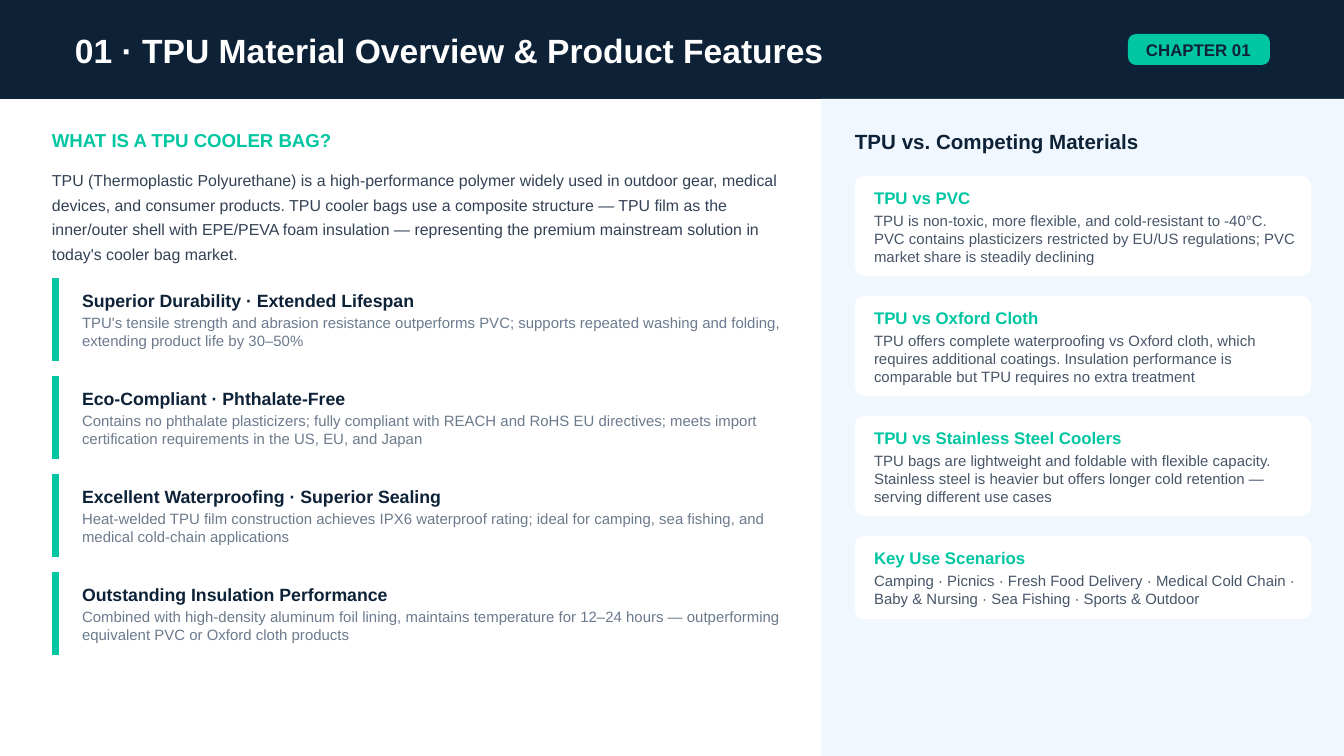
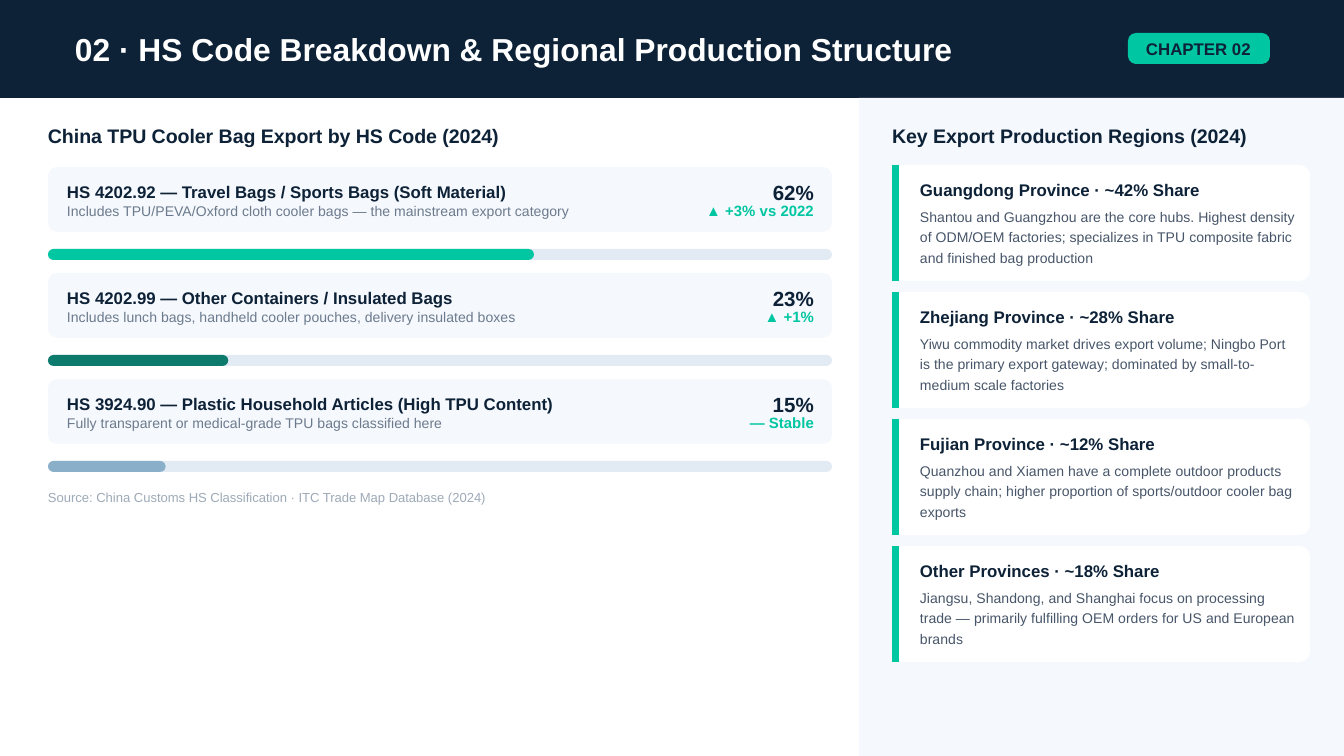
import pptx
import pptx.dml.color
import pptx.enum.shapes
import pptx.enum.text
import pptx.oxml
import pptx.oxml.ns
import pptx.util

PX = 914400 / 134.4  # EMU in one px
NAVY, GREEN, WHITE = "0D2137", "00C6A2", "FFFFFF"
SLATE, GREY, INK, PALE = "475569", "6B7A8D", "334155", "F5F8FC"
color = pptx.dml.color.RGBColor.from_string
SHAPES = pptx.enum.shapes.MSO_SHAPE
LEFT, RIGHT = pptx.enum.text.PP_ALIGN.LEFT, pptx.enum.text.PP_ALIGN.RIGHT


def add_block(page, left, top, width, height, fill, radius=0):
    kind = SHAPES.ROUNDED_RECTANGLE if radius else SHAPES.RECTANGLE
    block = page.shapes.add_shape(kind, *[round(n * PX) for n in (left, top, width, height)])
    if radius:
        block.adjustments[0] = min(0.5, radius / min(width, height))
    block.shadow.inherit = False
    block.fill.solid()
    block.fill.fore_color.rgb = color(fill)
    block.line.fill.background()


def add_text(page, left, top, width, height, text, size, ink, bold=False, align=LEFT, spacing=None):
    box = page.shapes.add_textbox(*[round(n * PX) for n in (left, top, width, height)])
    frame = box.text_frame
    frame.word_wrap = True
    frame.margin_left = frame.margin_top = frame.margin_right = frame.margin_bottom = 0
    para = frame.paragraphs[0]
    para.text = text
    para.alignment = align
    if spacing:
        para.line_spacing = pptx.util.Pt(spacing)
    para.font.name = "Arial"
    para.font.size = pptx.util.Pt(size)
    para.font.bold = bold
    para.font.color.rgb = color(ink)


deck = pptx.Presentation()
deck.slide_width, deck.slide_height = round(1344 * PX), round(756 * PX)

# Header band, chapter badge and right-hand panel of each slide
pages = []
for title, size, chapter, band, panel_left, panel_fill in [
    ("01 · TPU Material Overview & Product Features", 18, "CHAPTER 01", 99, 821, "F0F7FF"),
    ("02 · HS Code Breakdown & Regional Production Structure", 17, "CHAPTER 02", 98, 859, PALE),
]:
    page = deck.slides.add_slide(deck.slide_layouts[6])
    add_block(page, 0, 0, 1344, band, NAVY)
    add_text(page, 75, 30, 900, 39, title, size, WHITE, True)
    add_block(page, 1128, band - 65, 142, 31, GREEN, 8)
    add_text(page, 1146, band - 59, 108, 20, chapter, 9, NAVY, True)
    add_block(page, panel_left, band, 1344 - panel_left, 756 - band, panel_fill)
    pages.append(page)
overview, exports = pages
accents = []  # page, x, top, height of each green edge

# Slide 1, left: introduction and features
add_text(overview, 52, 129, 754, 22, "WHAT IS A TPU COOLER BAG?", 10, GREEN, True)
add_text(
    overview, 52, 165, 754, 98,
    "TPU (Thermoplastic Polyurethane) is a high-performance polymer widely used in outdoor gear, "
    "medical devices, and consumer products. TPU cooler bags use a composite structure — TPU film "
    "as the inner/outer shell with EPE/PEVA foam insulation — representing the premium mainstream "
    "solution in today's cooler bag market.",
    8.5, INK, spacing=13.2)
features = [
    ("Superior Durability · Extended Lifespan",
     "TPU's tensile strength and abrasion resistance outperforms PVC; supports repeated washing "
     "and folding, extending product life by 30–50%"),
    ("Eco-Compliant · Phthalate-Free",
     "Contains no phthalate plasticizers; fully compliant with REACH and RoHS EU directives; "
     "meets import certification requirements in the US, EU, and Japan"),
    ("Excellent Waterproofing · Superior Sealing",
     "Heat-welded TPU film construction achieves IPX6 waterproof rating; ideal for camping, "
     "sea fishing, and medical cold-chain applications"),
    ("Outstanding Insulation Performance",
     "Combined with high-density aluminum foil lining, maintains temperature for 12–24 hours — "
     "outperforming equivalent PVC or Oxford cloth products"),
]
for row, (name, detail) in enumerate(features):
    top = 278 + 98 * row
    add_block(overview, 52, top, 739, 83, WHITE, 11)
    accents.append((overview, 56, top, 83))
    add_text(overview, 82, top + 12, 702, 20, name, 9.5, NAVY, True)
    add_text(overview, 82, top + 36, 702, 34, detail, 8, GREY)

# Slide 1, right: comparison cards
add_text(overview, 855, 129, 465, 23, "TPU vs. Competing Materials", 11, NAVY, True)
comparisons = [
    ("TPU vs PVC", 3,
     "TPU is non-toxic, more flexible, and cold-resistant to -40°C. PVC contains plasticizers "
     "restricted by EU/US regulations; PVC market share is steadily declining"),
    ("TPU vs Oxford Cloth", 3,
     "TPU offers complete waterproofing vs Oxford cloth, which requires additional coatings. "
     "Insulation performance is comparable but TPU requires no extra treatment"),
    ("TPU vs Stainless Steel Coolers", 3,
     "TPU bags are lightweight and foldable with flexible capacity. Stainless steel is heavier "
     "but offers longer cold retention — serving different use cases"),
    ("Key Use Scenarios", 2,
     "Camping · Picnics · Fresh Food Delivery · Medical Cold Chain · Baby & Nursing · "
     "Sea Fishing · Sports & Outdoor"),
]
for row, (name, lines, detail) in enumerate(comparisons):
    top = 176 + 120 * row
    add_block(overview, 855, top, 456, 49 + 17 * lines, WHITE, 9)
    add_text(overview, 874, top + 12, 426, 20, name, 9, GREEN, True)
    add_text(overview, 874, top + 36, 426, 17 * lines, detail, 8, SLATE)

# Slide 2, left: HS codes with share bars
add_text(exports, 48, 124, 800, 23, "China TPU Cooler Bag Export by HS Code (2024)", 10.5, NAVY, True)
codes = [
    ("HS 4202.92 — Travel Bags / Sports Bags (Soft Material)",
     "Includes TPU/PEVA/Oxford cloth cooler bags — the mainstream export category",
     62, "▲ +3% vs 2022", 110, GREEN),
    ("HS 4202.99 — Other Containers / Insulated Bags",
     "Includes lunch bags, handheld cooler pouches, delivery insulated boxes",
     23, "▲ +1%", 52, "0D7A6E"),
    ("HS 3924.90 — Plastic Household Articles (High TPU Content)",
     "Fully transparent or medical-grade TPU bags classified here",
     15, "— Stable", 66, "8AAFC8"),
]
for row, (name, detail, share, trend, trend_width, bar_fill) in enumerate(codes):
    top = 167 + 106 * row
    add_block(exports, 48, top, 784, 65, PALE, 9)
    add_text(exports, 67, top + 15, 508, 20, name, 9, NAVY, True)
    add_text(exports, 67, top + 35, 508, 15, detail, 7.5, GREY)
    add_text(exports, 814 - trend_width, top + 13, trend_width, 23, f"{share}%", 11, NAVY, True, RIGHT)
    add_text(exports, 814 - trend_width, top + 35, trend_width, 16, trend, 8, GREEN, True, RIGHT)
    add_block(exports, 48, top + 82, 784, 11, "E2EAF4", 6)
    add_block(exports, 48, top + 82, 784 * share / 100, 11, bar_fill, 6)
add_text(exports, 48, 489, 800, 14,
         "Source: China Customs HS Classification · ITC Trade Map Database (2024)", 7, "9EAAB8")

# Slide 2, right: production regions
add_text(exports, 892, 124, 426, 23, "Key Export Production Regions (2024)", 10.5, NAVY, True)
regions = [
    ("Guangdong Province · ~42% Share",
     "Shantou and Guangzhou are the core hubs. Highest density of ODM/OEM factories; "
     "specializes in TPU composite fabric and finished bag production"),
    ("Zhejiang Province · ~28% Share",
     "Yiwu commodity market drives export volume; Ningbo Port is the primary export gateway; "
     "dominated by small-to-medium scale factories"),
    ("Fujian Province · ~12% Share",
     "Quanzhou and Xiamen have a complete outdoor products supply chain; higher proportion of "
     "sports/outdoor cooler bag exports"),
    ("Other Provinces · ~18% Share",
     "Jiangsu, Shandong, and Shanghai focus on processing trade — primarily fulfilling OEM "
     "orders for US and European brands"),
]
for row, (name, detail) in enumerate(regions):
    top = 165 + 127 * row
    add_block(exports, 892, top, 418, 116, WHITE, 11)
    accents.append((exports, 896, top, 116))
    add_text(exports, 920, top + 15, 378, 20, name, 9, NAVY, True)
    add_text(exports, 920, top + 40, 378, 60, detail, 7.5, SLATE, spacing=10.9)

# Green left edges of feature and region cards
for page, x, top, height in accents:
    ends = [round(n * PX) for n in (x, top, x, top + height)]
    edge = page.shapes.add_connector(pptx.enum.shapes.MSO_CONNECTOR.STRAIGHT, *ends)
    edge.line.color.rgb = color(GREEN)
    edge.line.width = pptx.util.Pt(3.75)
    edge._element.spPr.append(pptx.oxml.parse_xml(f"<a:effectLst {pptx.oxml.ns.nsdecls('a')}/>"))

deck.save("out.pptx")
